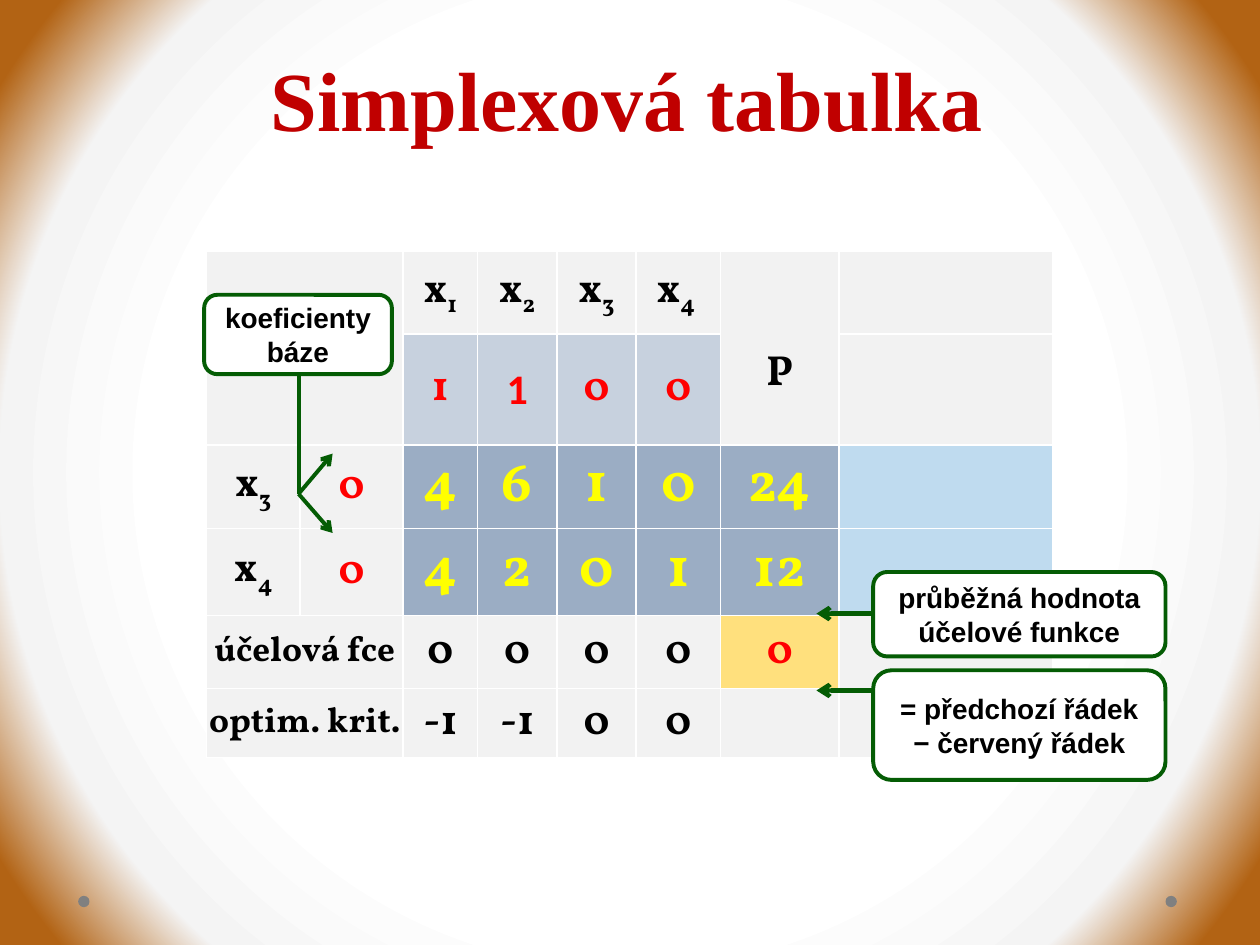
from lxml.etree import SubElement
from pptx import Presentation
from pptx.dml.color import RGBColor
from pptx.enum.shapes import MSO_CONNECTOR, MSO_SHAPE
from pptx.enum.text import MSO_ANCHOR, PP_ALIGN
from pptx.oxml import parse_xml
from pptx.oxml.ns import nsdecls, qn
from pptx.util import Inches, Pt

GREEN, GREY, NAVY, PALE = "045C04", "F2F2F2", "9BADC4", "C7D1DE"
BLACK, RED, YELLOW, WHITE = "000000", "FF0000", "FFFF00", "FFFFFF"
LEFT, TOP = 1.64, 1.99
COLS = [0.74, 0.82, 0.59, 0.63, 0.63, 0.67, 0.94, 1.7]
ROWS = [0.66, 0.81, 0.66, 0.69, 0.58, 0.55]
MERGES = [(0, 0, 1, 1), (0, 6, 1, 6), (4, 0, 4, 1), (5, 0, 5, 1)]
# An underscore starts a subscript.
TEXTS = [
    ["", "", "x_1", "x_2", "x_3", "x_4 ", "P", ""],
    ["", "", "1", "1", "0", "0", "", ""],
    ["x_3", "0", "4", "6", "1", "0", "24", ""],
    ["x_4", "0", "4", "2", "0", "1", "12", ""],
    ["účelová fce", "", "0", "0", "0", "0", "0", ""],
    ["optim. krit.", "", "-1", "-1", "0", "0", "", ""],
]


def color(code):
    return RGBColor.from_string(code)


def paint(fill, code):
    fill.solid()
    fill.fore_color.rgb = color(code)


def style(run, font, size, code):
    run.font.name = font
    run.font.size = Pt(size)
    run.font.bold = True
    run.font.color.rgb = color(code)


def backdrop(slide):
    """Fill the background with a round gradient, white in the middle."""
    fill = slide.background.fill
    fill.solid()
    solid = slide.background._cSld.bg.bgPr.find(qn("a:solidFill"))
    stops = "".join(
        f'<a:gs pos="{pos}000"><a:srgbClr val="{code}"/></a:gs>'
        for pos, code in [(59, WHITE), (80, "F4F4F4"), (94, "B26314")])
    solid.getparent().replace(solid, parse_xml(
        f'<a:gradFill {nsdecls("a")} rotWithShape="1"><a:gsLst>{stops}</a:gsLst>'
        '<a:path path="circle"><a:fillToRect l="50000" t="50000" '
        'r="50000" b="50000"/></a:path></a:gradFill>'))


def heading(slide, text):
    title = slide.shapes.title
    title.left, title.top = Inches(0.96), Inches(0.32)
    title.width, title.height = Inches(8.03), Inches(0.91)
    title.text_frame.text = text
    para = title.text_frame.paragraphs[0]
    para.alignment = PP_ALIGN.CENTER
    style(para.runs[0], "Times New Roman", 48, "C00000")


def dot(slide, left):
    shape = slide.shapes.add_shape(
        MSO_SHAPE.OVAL, Inches(left), Inches(7.11), Inches(0.09), Inches(0.09))
    shape.shadow.inherit = False
    paint(shape.fill, "808080")
    shape.line.fill.background()


def look(row, col):
    """Return fill, text colour and text size of a cell."""
    if row in (2, 3) and col >= 2:
        return ("0070C0" if col == 7 else NAVY), YELLOW, 32
    if row == 1 and 2 <= col <= 5:
        return PALE, RED, 24
    if (row, col) == (4, 6):
        return "FFE07D", RED, 24
    if row in (2, 3) and col == 1:
        return GREY, RED, 24
    return GREY, BLACK, 20 if row >= 4 and col == 0 else 24


def border(cell):
    props = cell._tc.get_or_add_tcPr()
    for side in ("lnL", "lnR", "lnT", "lnB"):
        edge = SubElement(props, qn(f"a:{side}"), w=str(Pt(1)))
        fill = SubElement(edge, qn("a:solidFill"))
        SubElement(fill, qn("a:srgbClr"), val=WHITE)


def write(cell, text, font, size, code):
    cell.text_frame.text = ""
    para = cell.text_frame.paragraphs[0]
    para.alignment = PP_ALIGN.CENTER
    for index, part in enumerate(text.split("_")):
        run = para.add_run()
        run.text = part
        style(run, font, size, code)
        if index:
            run.font._element.set("baseline", "-25000")


def tableau(slide):
    table = slide.shapes.add_table(
        len(ROWS), len(COLS), Inches(LEFT), Inches(TOP),
        Inches(sum(COLS)), Inches(sum(ROWS))).table
    table.first_row = table.horz_banding = False
    for col, width in zip(table.columns, COLS):
        col.width = Inches(width)
    for row, height in zip(table.rows, ROWS):
        row.height = Inches(height)
    for r, texts in enumerate(TEXTS):
        for c, text in enumerate(texts):
            cell = table.cell(r, c)
            back, ink, size = look(r, c)
            cell.vertical_anchor = MSO_ANCHOR.MIDDLE
            cell.margin_left = cell.margin_right = cell.margin_top = Inches(0.01)
            cell.margin_bottom = 0
            border(cell)
            paint(cell.fill, back)
            if back == "0070C0":
                tint = cell._tc.tcPr.find(qn("a:solidFill"))[0]
                SubElement(tint, qn("a:alpha"), val="25000")
            if text:
                font = "Calibri" if (r, c) == (1, 3) else "Vollkorn"
                write(cell, text, font, size, ink)
    table.cell(0, 6).margin_top = Inches(0.42)
    for top, left, bottom, right in MERGES:
        table.cell(top, left).merge(table.cell(bottom, right))


def callout(shapes, text, left, top, width, height):
    box = shapes.add_shape(
        MSO_SHAPE.ROUNDED_RECTANGLE, Inches(left), Inches(top),
        Inches(width), Inches(height))
    box.shadow.inherit = False
    paint(box.fill, WHITE)
    box.line.color.rgb = color(GREEN)
    box.line.width = Pt(2.25)
    frame = box.text_frame
    frame.word_wrap = True
    frame.vertical_anchor = MSO_ANCHOR.MIDDLE
    frame.text = text
    para = frame.paragraphs[0]
    para.alignment = PP_ALIGN.CENTER
    style(para.runs[0], "Arial", 16, BLACK)


def link(shapes, start, end, width=2.25, arrow=True):
    line = shapes.add_connector(
        MSO_CONNECTOR.STRAIGHT, *map(Inches, start), *map(Inches, end))
    line.line.color.rgb = color(GREEN)
    line.line.width = Pt(width)
    if arrow:
        SubElement(line.line._get_or_add_ln(), qn("a:tailEnd"), type="arrow")
    SubElement(line._element.spPr, qn("a:effectLst"))


def main():
    deck = Presentation()
    deck.slide_width, deck.slide_height = Inches(10), Inches(7.5)
    slide = deck.slides.add_slide(deck.slide_layouts[5])
    backdrop(slide)
    for left in (9.25, 0.62):
        dot(slide, left)
    heading(slide, "Simplexová tabulka")
    tableau(slide)

    group = slide.shapes.add_group_shape().shapes
    fork = (2.37, 3.92)
    callout(group, "koeficienty báze", 1.62, 2.34, 1.49, 0.63)
    link(group, (2.37, 2.97), fork, arrow=False)
    for tip in (3.6, 4.23):
        link(group, fork, (2.64, tip))

    for text, top, height, level in [
            ("průběžná hodnota účelové funkce", 4.54, 0.67, 4.87),
            ("= předchozí řádek − červený řádek", 5.32, 0.87, 5.48)]:
        callout(slide.shapes, text, 6.93, top, 2.32, height)
        link(slide.shapes, (6.93, level), (6.48, level), 2.5)
    deck.save("out.pptx")


if __name__ == "__main__":
    main()
